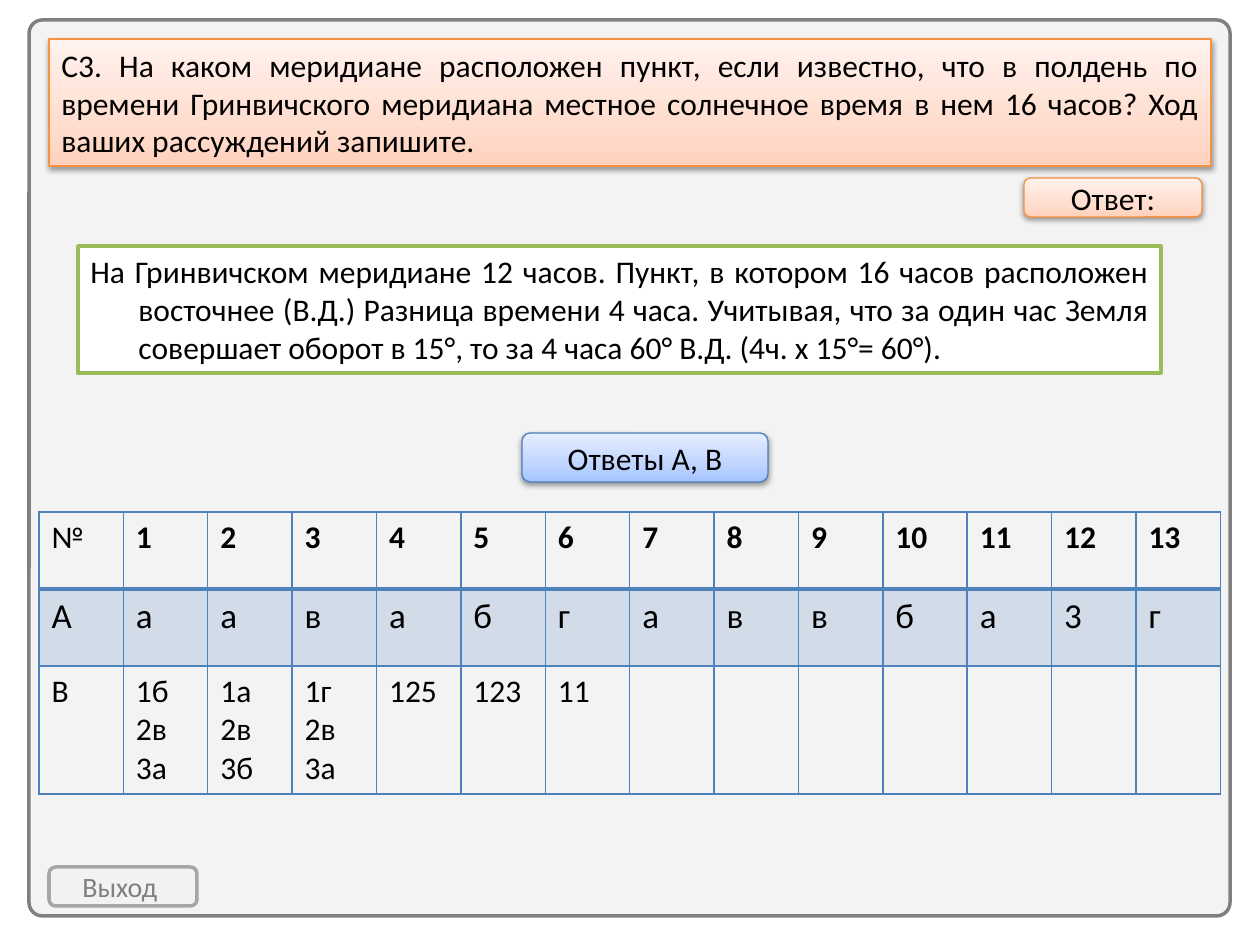
from lxml.etree import SubElement
from pptx import Presentation
from pptx.dml.color import RGBColor
from pptx.enum.shapes import MSO_SHAPE
from pptx.enum.text import MSO_ANCHOR, PP_ALIGN
from pptx.oxml.ns import qn
from pptx.util import Emu, Pt

SCALE = 914400 / 126  # EMU in one px
FONT = "Calibri"
COLORS = {
    "black": "000000", "white": "FFFFFF", "panel": "F2F2F2",
    "frame": "808080", "exit": "A6A6A6", "orange": "F69240",
    "green": "9BBB59", "button": "4B7EBC", "table": "4F81BD",
}
# Stops as position in percent and colour, from bottom to top
PEACH = [(0, "FFD2BD"), (35, "FFDED0"), (100, "FFF2ED")]
BLUE = [(0, "A4C4FF"), (35, "BFD4FF"), (100, "E6EEFF")]

QUESTION = (
    "С3. На каком меридиане расположен пункт, если известно, что в полдень по "
    "времени Гринвичского меридиана местное солнечное время в нем 16 часов? Ход "
    "ваших рассуждений запишите."
)
SOLUTION = (
    "На Гринвичском меридиане 12 часов. Пункт, в котором 16 часов расположен "
    "восточнее (В.Д.) Разница времени 4 часа. Учитывая, что за один час Земля "
    "совершает оборот в 15°, то за 4 часа 60° В.Д. (4ч. x 15°= 60°)."
)
ROWS = [
    ["№"] + [str(number) for number in range(1, 14)],
    ["А"] + list("аававбгаввба3г".replace("авав", "аава", 1)[:0] or "аавабгаввба3г"),
    ["В", "1б 2в\n3а", "1а\n2в\n3б", "1г\n2в\n3а", "125", "123", "11"] + [""] * 7,
]


def px(value):
    return Emu(round(value * SCALE))


def rgb(name):
    return RGBColor.from_string(COLORS[name])


def set_alpha(fill_parent, percent):
    color = fill_parent.find(qn("a:solidFill"))[0]
    SubElement(color, qn("a:alpha"), val=str(percent * 1000))


def set_gradient(shape, stops):
    shape.fill.gradient()
    shape.fill.gradient_angle = 90
    stop_list = shape._element.spPr.find(qn("a:gradFill")).find(qn("a:gsLst"))
    for stop in list(stop_list):
        stop_list.remove(stop)
    for position, color in stops:
        stop = SubElement(stop_list, qn("a:gs"), pos=str(position * 1000))
        SubElement(stop, qn("a:srgbClr"), val=color)


def add_shadow(shape):
    effects = shape._element.spPr.find(qn("a:effectLst"))
    shadow = SubElement(effects, qn("a:outerShdw"), blurRad="40000",
                        dist="20000", dir="5400000", rotWithShape="0")
    color = SubElement(shadow, qn("a:srgbClr"), val=COLORS["black"])
    SubElement(color, qn("a:alpha"), val="38000")


def format_font(font, color="black", **values):
    for name, value in {"name": FONT, "size": Pt(18), "bold": False, **values}.items():
        setattr(font, name, value)
    font.color.rgb = rgb(color)


def add_panel(page, kind, place, line, width, fill="panel", alpha=None):
    shape = page.shapes.add_shape(kind, *map(px, place))
    shape.line.color.rgb = rgb(line)
    shape.line.width = Pt(width)
    shape.shadow.inherit = False
    if isinstance(fill, list):
        set_gradient(shape, fill)
        add_shadow(shape)
    else:
        shape.fill.solid()
        shape.fill.fore_color.rgb = rgb(fill)
    if alpha:
        set_alpha(shape._element.spPr, alpha)
    return shape


def write_text(shape, text, align=PP_ALIGN.CENTER, anchor=MSO_ANCHOR.MIDDLE, **font):
    box = shape.text_frame
    box.word_wrap = True
    box.vertical_anchor = anchor
    para = box.paragraphs[0]
    para.alignment = align
    span = para.add_run()
    span.text = text
    format_font(span.font, **font)
    return para


def set_borders(cell, widths):
    properties = cell._tc.get_or_add_tcPr()
    for index, (side, width) in enumerate(widths.items()):
        line = SubElement(properties, qn(f"a:ln{side}"), w=str(Pt(width)))
        fill = SubElement(line, qn("a:solidFill"))
        SubElement(fill, qn("a:srgbClr"), val=COLORS["table"])
        properties.insert(index, line)


def add_answer_table(page, place):
    frame = page.shapes.add_table(len(ROWS), len(ROWS[0]), *map(px, place))
    table = frame.table
    table.first_row = table.horz_banding = False
    for row, texts in enumerate(ROWS):
        for column, text in enumerate(texts):
            cell = table.cell(row, column)
            if row == 1:
                cell.fill.solid()
                cell.fill.fore_color.rgb = rgb("table")
                set_alpha(cell._tc.tcPr, 20)
            else:
                cell.fill.background()
            # The rule under the header is heavier
            set_borders(cell, {"L": 1, "R": 1, "T": 2 if row == 1 else 1,
                               "B": 2 if row == 0 else 1})
            cell.text = text
            for para in cell.text_frame.paragraphs:
                format_font(para.font, size=Pt(20 if row == 1 else 18),
                            bold=row == 0 and column > 0)
                for span in para.runs:
                    format_font(span.font, size=para.font.size, bold=para.font.bold)


def main():
    deck = Presentation()
    deck.slide_width, deck.slide_height = px(1260), px(945)
    page = deck.slides.add_slide(deck.slide_layouts[6])
    rounded, square = MSO_SHAPE.ROUNDED_RECTANGLE, MSO_SHAPE.RECTANGLE

    # Frame and exit button
    frame = add_panel(page, rounded, (29, 20, 1201, 896), "frame", 2, alpha=90)
    frame.adjustments[0] = 0.015
    leave = add_panel(page, rounded, (49, 867, 148, 39), "exit", 2, alpha=90)
    write_text(leave, "Выход ", color="frame", size=Pt(16))

    # Question and its answer
    question = add_panel(page, square, (49, 39, 1162, 127), "orange", 0.75, PEACH)
    write_text(question, QUESTION, PP_ALIGN.JUSTIFY)
    answer = add_panel(page, rounded, (1024, 178, 178, 39), "orange", 0.75, PEACH)
    write_text(answer, "Ответ:")
    solution = add_panel(page, square, (78, 246, 1083, 127), "green", 2, "white")
    para = write_text(solution, SOLUTION, PP_ALIGN.JUSTIFY, MSO_ANCHOR.TOP)
    hanging = px(48)
    para._p.get_or_add_pPr().set("marL", str(hanging))
    para._p.get_or_add_pPr().set("indent", str(-hanging))

    # Answers to parts A and B
    button = add_panel(page, rounded, (522, 433, 246, 49), "button", 0.75, BLUE)
    write_text(button, "Ответы А, В")
    add_answer_table(page, (39, 512, 1182, 231))

    deck.save("out.pptx")


if __name__ == "__main__":
    main()
